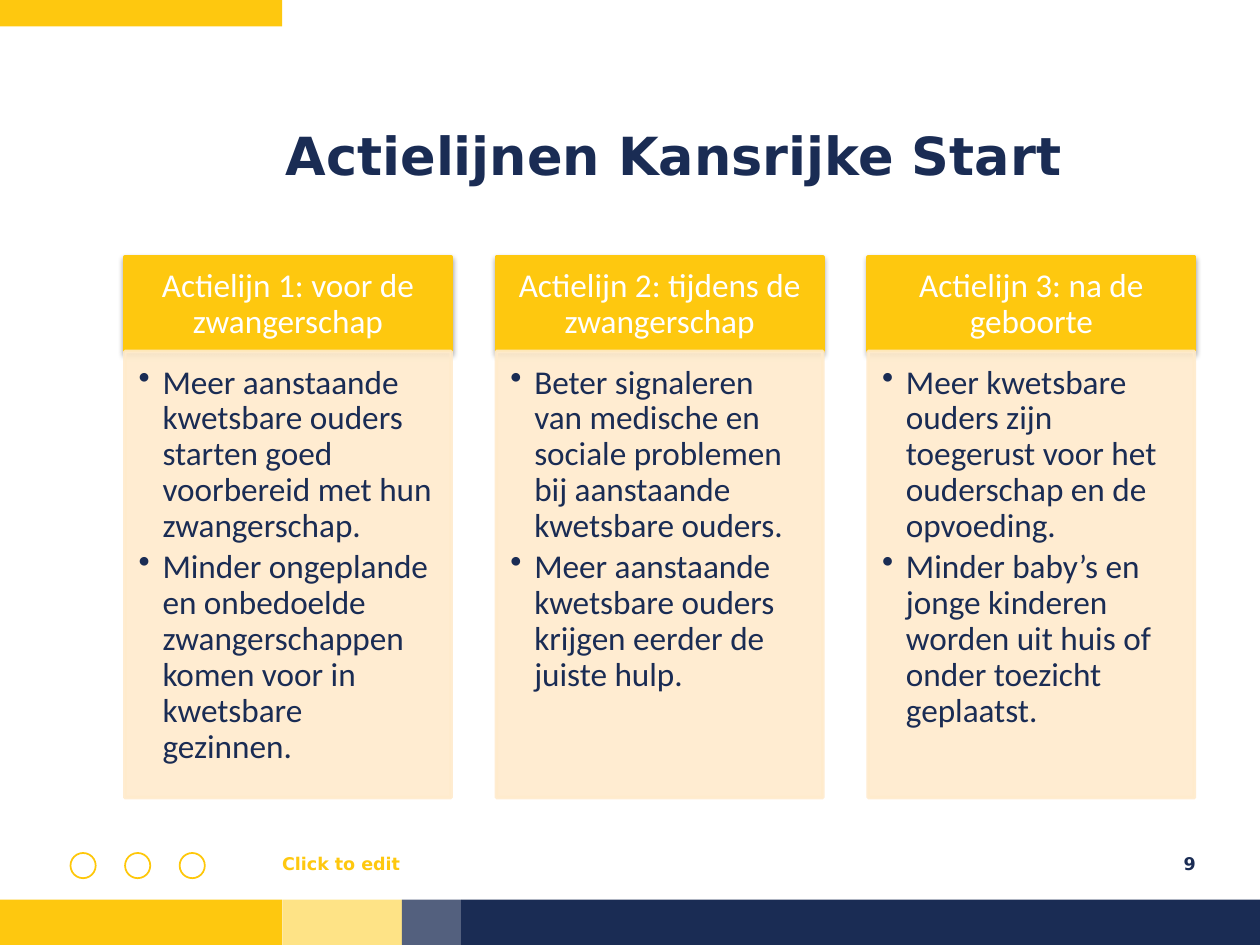
from lxml.etree import SubElement
from pptx import Presentation
from pptx.dml.color import RGBColor
from pptx.enum.shapes import MSO_SHAPE
from pptx.enum.text import MSO_ANCHOR, PP_ALIGN
from pptx.oxml.ns import qn
from pptx.util import Inches, Pt

YELLOW, NAVY, CREAM, WHITE = "FEC80F", "1A2C54", "FFEBCC", "FFFFFF"
COLS, ROWS = 100, 75

prs = Presentation()
prs.slide_width, prs.slide_height = Inches(10), Inches(7.5)
s = prs.slides.add_slide(prs.slide_layouts[6])


def color(value):
    return RGBColor.from_string(value)


def place(box):
    x, y, w, h = box
    col, row = prs.slide_width / COLS, prs.slide_height / ROWS
    return round(x * col), round(y * row), round(w * col), round(h * row)


def add_block(box, fill, line=None, width=1, kind=MSO_SHAPE.RECTANGLE):
    sp = s.shapes.add_shape(kind, *place(box))
    sp.fill.solid()
    sp.fill.fore_color.rgb = color(fill)
    if line:
        sp.line.color.rgb = color(line)
        sp.line.width = Pt(width)
    else:
        sp.line.fill.background()
    sp.shadow.inherit = False
    return sp


def set_frame(sp, insets, anchor=MSO_ANCHOR.TOP):
    tf = sp.text_frame
    tf.word_wrap = True
    tf.vertical_anchor = anchor
    tf.margin_left, tf.margin_top, tf.margin_right, tf.margin_bottom = map(Inches, insets)
    return tf


def add_run(p, text, size, ink, font, bold=False):
    r = p.add_run()
    r.text = text
    r.font.size = Pt(size)
    r.font.name = font
    r.font.bold = bold
    r.font.color.rgb = color(ink)


def add_label(box, text, size, ink, insets=(0, 0, 0, 0), align=PP_ALIGN.LEFT):
    tf = set_frame(s.shapes.add_textbox(*place(box)), insets)
    p = tf.paragraphs[0]
    p.alignment = align
    add_run(p, text, size, ink, "DejaVu Sans", True)


def add_soft_shadow(sp):
    effects = sp._element.spPr.find(qn("a:effectLst"))
    shadow = SubElement(effects, qn("a:outerShdw"), blurRad=str(Pt(3.1)),
                        dist=str(Pt(1.6)), dir="5400000", rotWithShape="0")
    ink = SubElement(shadow, qn("a:srgbClr"), val="000000")
    SubElement(ink, qn("a:alpha"), val="38000")


def set_opacity(sp, percent):
    for ink in sp._element.spPr.iter(qn("a:srgbClr")):
        SubElement(ink, qn("a:alpha"), val=str(percent * 1000))


def add_bullet(p):
    pPr = p._p.get_or_add_pPr()
    pPr.set("marL", str(Inches(0.19)))
    pPr.set("indent", str(-Inches(0.19)))
    SubElement(pPr, qn("a:buChar"), char="•")


def color_bands(box):
    x, y, w, h = box
    bands = [(22.4, YELLOW), (9.5, "FEE386"), (4.7, "53607E"), (63.4, NAVY)]
    add_block((x, 0, bands[0][0], 2.1), YELLOW)
    for share, fill in bands:
        add_block((x, y, w * share / 100, h), fill)
        x += w * share / 100


def footer(box):
    x, y, w, h = box
    for i in range(3):
        add_block((x + 4.33 * i, y, 2, 2), WHITE, "FEC709", kind=MSO_SHAPE.OVAL)
    add_label((x + 16.8, y, 52, h), "Click to edit", 10, YELLOW)
    add_label((x + w - 4.7, y, 4.7, h), "9", 10, NAVY, align=PP_ALIGN.RIGHT)


def action_card(box, heading, goals):
    x, y, w, h = box
    head = 7.5
    sp = add_block((x, y, w, head), YELLOW, YELLOW, 2)
    add_soft_shadow(sp)
    p = set_frame(sp, (0.15, 0.08, 0.15, 0.08), MSO_ANCHOR.MIDDLE).paragraphs[0]
    p.alignment = PP_ALIGN.CENTER
    p.line_spacing = 0.9
    add_run(p, heading, 19, WHITE, "Calibri")

    sp = add_block((x, y + head, w, h - head), CREAM, CREAM, 2)
    set_opacity(sp, 90)
    tf = set_frame(sp, (0.11, 0.11, 0.15, 0.17))
    for i, goal in enumerate(goals):
        p = tf.add_paragraph() if i else tf.paragraphs[0]
        p.alignment = PP_ALIGN.LEFT
        p.line_spacing = 0.9
        p.space_after = Pt(2.85)
        add_bullet(p)
        add_run(p, goal, 19, NAVY, "Calibri")


def action_columns(box, cards):
    x, y, w, h = box
    card_w = 25.9
    pitch = (w - card_w) / (len(cards) - 1)
    for i, (heading, goals) in enumerate(cards):
        action_card((x + i * pitch, y, card_w, h), heading, goals)


CARDS = [
    ("Actielijn 1: voor de zwangerschap", [
        "Meer aanstaande kwetsbare ouders starten goed voorbereid met hun zwangerschap.",
        "Minder ongeplande en onbedoelde zwangerschappen komen voor in kwetsbare gezinnen.",
    ]),
    ("Actielijn 2: tijdens de zwangerschap", [
        "Beter signaleren van medische en sociale problemen bij aanstaande kwetsbare ouders.",
        "Meer aanstaande kwetsbare ouders krijgen eerder de juiste hulp.",
    ]),
    ("Actielijn 3: na de geboorte", [
        "Meer kwetsbare ouders zijn toegerust voor het ouderschap en de opvoeding.",
        "Minder baby’s en jonge kinderen worden uit huis of onder toezicht geplaatst.",
    ]),
]

color_bands((0, 71.4, COLS, 3.6))
add_label((21.7, 9.3, 73.2, 12.5), "Actielijnen Kansrijke Start", 30, NAVY, (0.1, 0.05, 0.1, 0.05))
footer((5.6, 67.7, 89.3, 2.9))
action_columns((9.9, 20.4, 84.9, 42.9), CARDS)

prs.save("out.pptx")
